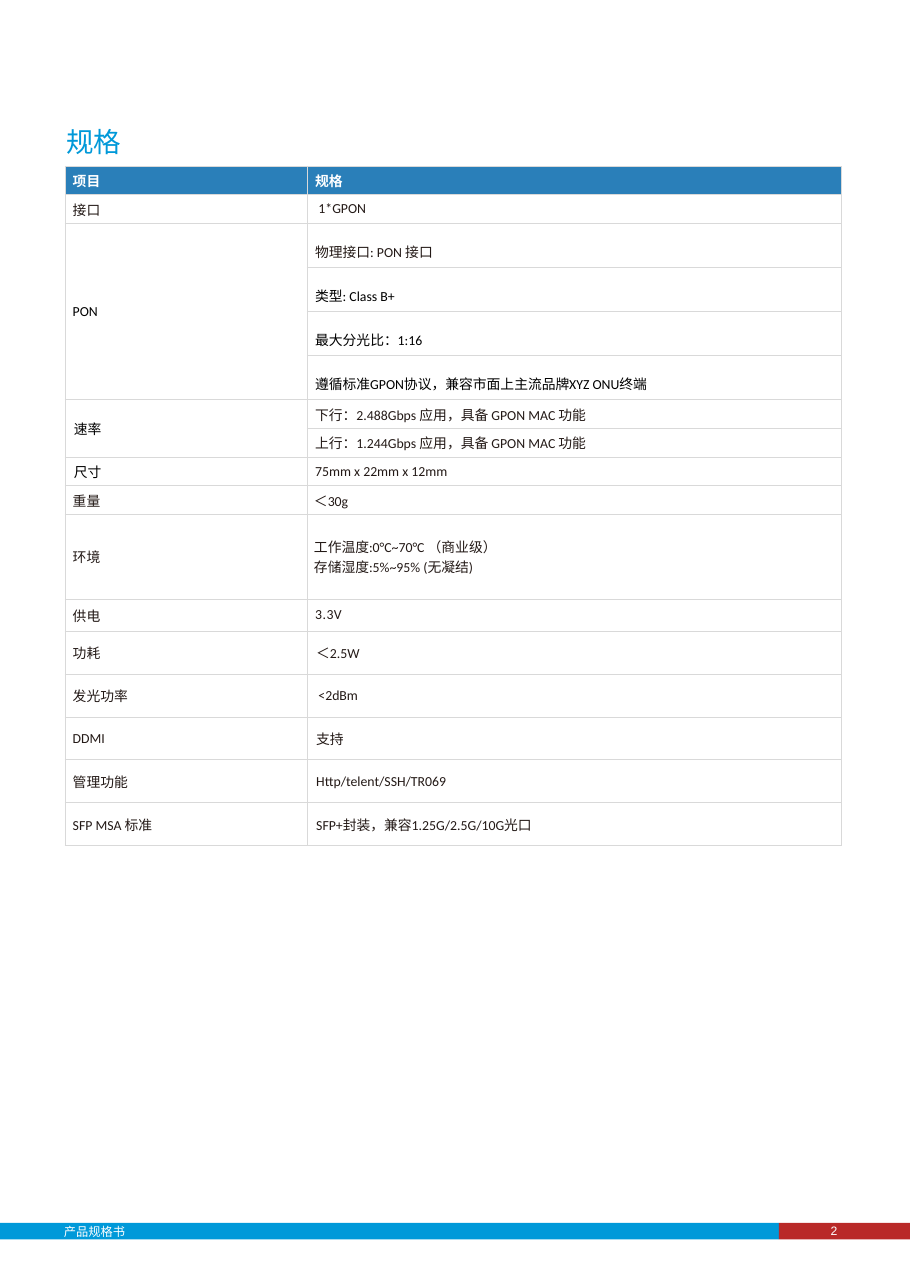
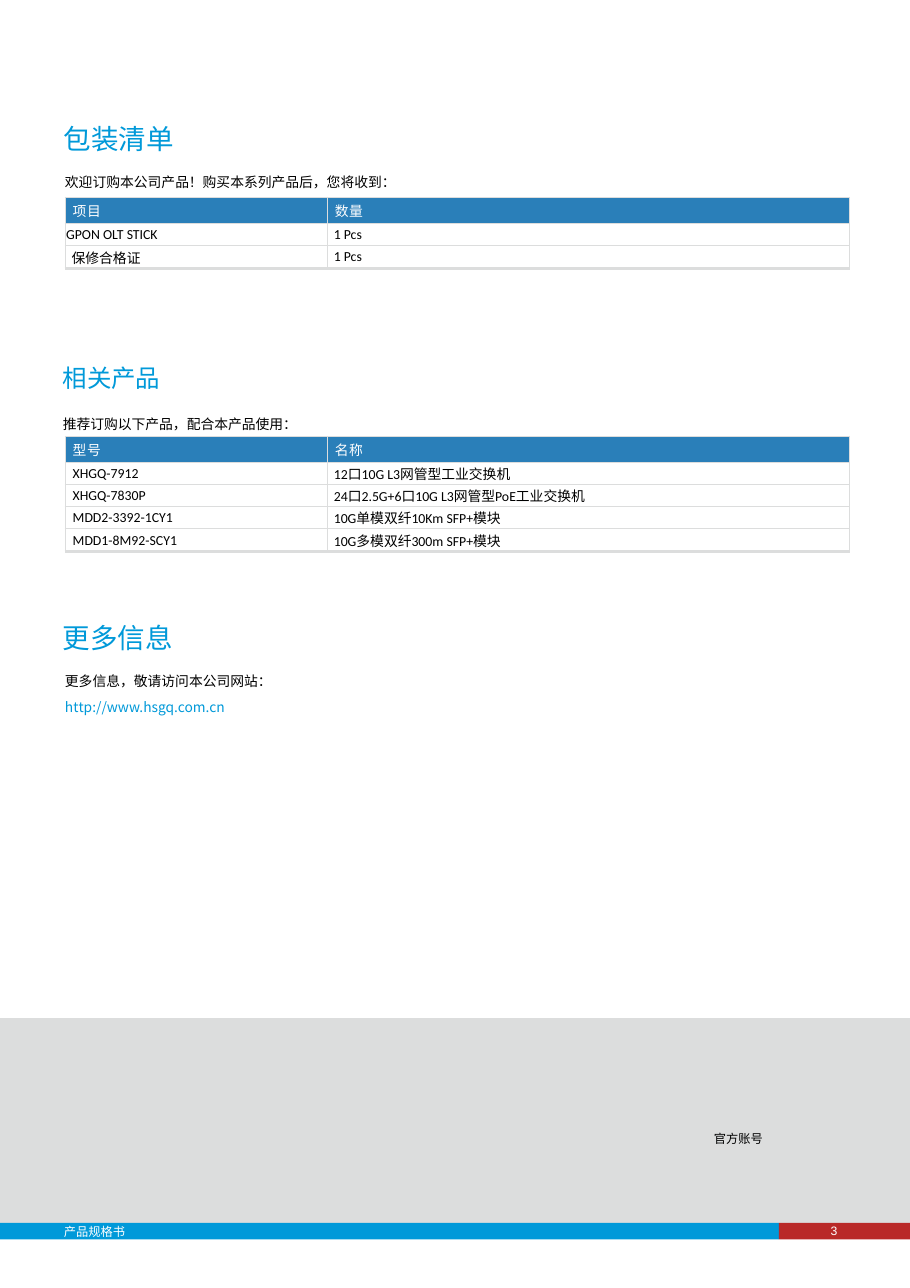
"""Build the specification and ordering pages of a product datasheet."""
from dataclasses import dataclass
from typing import Optional

from lxml.etree import SubElement
from pptx import Presentation
from pptx.dml.color import RGBColor
from pptx.enum.shapes import MSO_SHAPE
from pptx.enum.text import MSO_ANCHOR
from pptx.oxml.ns import qn
from pptx.slide import Slide
from pptx.util import Inches, Pt


@dataclass(frozen=True)
class Theme:
    """Colours, fonts and type sizes shared by both pages."""
    sky: str = "0099D9"
    red: str = "B92928"
    header: str = "2A7FB9"
    panel: str = "DCDDDD"
    rule: str = "D9D9D9"
    white: str = "FFFFFF"
    black: str = "000000"
    ink: str = "231916"
    cjk: str = "Noto Sans CJK SC"
    latin: str = "Calibri"
    folio: str = "Arial"
    title: float = 18
    subtitle: float = 16
    body: float = 9
    small: float = 8


@dataclass(frozen=True)
class Page:
    """Page size and the main lines of its grid."""
    width: float = 8.26
    height: float = 11.69
    margin: float = 0.59
    band_top: float = 11.1
    band_height: float = 0.15
    band_split: float = 7.07
    panel_top: float = 9.24


THEME = Theme()
PAGE = Page()


@dataclass(frozen=True)
class Span:
    """A run of text with its letter spacing in points."""
    text: str
    spacing: float = 0


@dataclass(frozen=True)
class Line:
    """A paragraph; exact is its line height in points, ratio a multiple."""
    spans: tuple[Span, ...]
    size: float = THEME.body
    font: str = THEME.cjk
    color: str = THEME.black
    indent: float = 0.01
    before: float = 0
    exact: Optional[float] = None
    ratio: Optional[float] = None
    bold: bool = False


@dataclass(frozen=True)
class Cell:
    """A table cell and the number of rows it covers."""
    lines: tuple[Line, ...]
    rows: int = 1
    fill: str = THEME.white


@dataclass(frozen=True)
class Row:
    """A table row; None marks a cell covered from above."""
    height: float
    cells: tuple[Optional[Cell], ...]


@dataclass(frozen=True)
class Rules:
    """Border colour and widths of a table."""
    color: str
    width: float
    last: float


def rgb(color: str) -> RGBColor:
    """Turn a hex string into a colour."""
    return RGBColor.from_string(color)


def write(frame, lines: tuple[Line, ...]) -> None:
    """Fill a text frame with lines, run by run."""
    for position, line in enumerate(lines):
        paragraph = frame.paragraphs[0] if position == 0 else frame.add_paragraph()
        properties = paragraph._p.get_or_add_pPr()
        properties.set("marL", str(Inches(line.indent)))
        properties.set("indent", "0")
        if line.exact:
            paragraph.line_spacing = Pt(line.exact)
        elif line.ratio:
            paragraph.line_spacing = line.ratio
        if line.before:
            paragraph.space_before = Pt(line.before)
        for span in line.spans:
            run = paragraph.add_run()
            run.text = span.text
            run.font.size = Pt(line.size)
            run.font.bold = line.bold
            run.font.color.rgb = rgb(line.color)
            run.font.name = line.font
            character = run._r.get_or_add_rPr()
            SubElement(character, qn("a:ea")).set("typeface", THEME.cjk)
            if span.spacing:
                character.set("spc", str(round(span.spacing * 100)))


def add_text(slide: Slide, left: float, top: float, width: float, height: float,
             *lines: Line) -> None:
    """Add a text box without margins."""
    frame = slide.shapes.add_textbox(
        Inches(left), Inches(top), Inches(width), Inches(height)).text_frame
    frame.word_wrap = True
    frame.margin_left = frame.margin_right = frame.margin_top = frame.margin_bottom = 0
    write(frame, lines)


def add_block(slide: Slide, left: float, top: float, width: float, height: float,
              color: str) -> None:
    """Add a plain filled rectangle."""
    block = slide.shapes.add_shape(
        MSO_SHAPE.RECTANGLE, Inches(left), Inches(top), Inches(width), Inches(height))
    block.shadow.inherit = False
    block.fill.solid()
    block.fill.fore_color.rgb = rgb(color)
    block.line.fill.background()


def add_footer(slide: Slide, number: int) -> None:
    """Add the two footer bands with the document name and page number."""
    add_block(slide, 0, PAGE.band_top, PAGE.band_split, PAGE.band_height, THEME.sky)
    add_block(slide, PAGE.band_split, PAGE.band_top, PAGE.width - PAGE.band_split,
              PAGE.band_height, THEME.red)
    add_text(slide, 0.57, 11.11, 1.23, 0.13,
             plain("产品规格书", size=THEME.small, color=THEME.white, exact=10))
    add_text(slide, 7.51, PAGE.band_top, 0.12, PAGE.band_height,
             plain(str(number), size=THEME.small, color=THEME.white,
                   font=THEME.folio, indent=0.03))


def add_border(properties, side: str, color: str, width: float) -> None:
    """Add one cell border."""
    border = SubElement(properties, qn(f"a:{side}"), w=str(Pt(width)))
    SubElement(SubElement(border, qn("a:solidFill")), qn("a:srgbClr"), val=color)


def add_grid(slide: Slide, top: float, columns: tuple[float, ...],
             rows: tuple[Row, ...], rules: Rules) -> None:
    """Add a table at the page margin."""
    table = slide.shapes.add_table(
        len(rows), len(columns), Inches(PAGE.margin), Inches(top),
        Inches(sum(columns)), Inches(sum(row.height for row in rows))).table
    table.first_row = table.horz_banding = False
    for column, width in zip(table.columns, columns):
        column.width = Inches(width)
    for r, row in enumerate(rows):
        table.rows[r].height = Inches(row.height)
        for c, content in enumerate(row.cells):
            cell = table.cell(r, c)
            properties = cell._tc.get_or_add_tcPr()
            for side in ("lnL", "lnR", "lnT", "lnB"):
                closing = side == "lnB" and r == len(rows) - 1
                add_border(properties, side, rules.color,
                           rules.last if closing else rules.width)
            cell.margin_left = cell.margin_right = 0
            cell.margin_top = cell.margin_bottom = 0
            cell.vertical_anchor = MSO_ANCHOR.MIDDLE
            cell.fill.solid()
            cell.fill.fore_color.rgb = rgb(content.fill if content else THEME.white)
            if content:
                write(cell.text_frame, content.lines)
                if content.rows > 1:
                    cell.merge(table.cell(r + content.rows - 1, c))


def plain(text: str, **style) -> Line:
    """Make a line of a single run."""
    return Line((Span(text),), **style)


def title(text: str, size: float = THEME.title) -> Line:
    """Make a section title."""
    return plain(text, size=size, color=THEME.sky, exact=round(size * 1.3, 1))


def intro(*spans: Span, indent: float, before: float) -> Line:
    """Make the sentence below a section title."""
    return Line(spans, indent=indent, before=before, exact=10.5)


def cell(*texts: str, color: str = THEME.ink, indent: float = 0.07, rows: int = 1,
         ratio: Optional[float] = None, spacing: float = 0) -> Cell:
    """Make a body cell with one line per text."""
    return Cell(tuple(Line((Span(text, spacing),), font=THEME.latin, color=color,
                           indent=indent, ratio=ratio) for text in texts), rows)


def bold_head(text: str) -> Cell:
    """Make a header cell of the specification table."""
    return Cell((plain(text, font=THEME.latin, color=THEME.white, indent=0.07,
                       bold=True),), fill=THEME.header)


def spaced_head(text: str) -> Cell:
    """Make a header cell of an ordering table."""
    return Cell((Line((Span(text[0], 0.3), Span(text[1:])), color=THEME.white,
                      indent=0.07),), fill=THEME.header)


def order_row(label: str, value: str, height: float = 0.2, indent: float = 0.07) -> Row:
    """Make a body row of an ordering table."""
    return Row(height, (cell(label, color=THEME.black, indent=indent),
                        cell(value, color=THEME.black, indent=0.06)))


def build_specification(slide: Slide) -> None:
    """Draw the specification page."""
    low, tall = 0.26, 0.39
    pon = ("类型: Class B+", "最大分光比：1:16",
           "遵循标准GPON协议，兼容市面上主流品牌XYZ ONU终端")
    features = (("功耗", "＜2.5W", 0.08), ("发光功率", "<2dBm", 0.1),
                ("DDMI", "支持", 0.08), ("管理功能", "Http/telent/SSH/TR069", 0.08),
                ("SFP MSA 标准", "SFP+封装，兼容1.25G/2.5G/10G光口", 0.08))
    rows = (
        Row(low, (bold_head("项目"), bold_head("规格"))),
        Row(low, (cell("接口"), cell("1*GPON", indent=0.1))),
        Row(0.4, (cell("PON", color=THEME.black, rows=4),
                  cell("物理接口: PON 接口", ratio=1.56))),
        *(Row(0.4, (None, cell(text, color=THEME.black, ratio=1.56))) for text in pon),
        Row(low, (cell("速率", color=THEME.black, indent=0.08, rows=2),
                  cell("下行：2.488Gbps 应用，具备 GPON MAC 功能"))),
        Row(low, (None, cell("上行：1.244Gbps 应用，具备 GPON MAC 功能"))),
        Row(low, (cell("尺寸", color=THEME.black, indent=0.08),
                  cell("75mm x 22mm x 12mm"))),
        Row(low, (cell("重量"), cell("＜30g", indent=0.06))),
        Row(0.77, (cell("环境"), cell("工作温度:0°C~70°C （商业级）",
                                    "存储湿度:5%~95% (无凝结)", indent=0.06))),
        Row(0.29, (cell("供电"), cell("3.3V", spacing=0.3))),
        *(Row(tall, (cell(label), cell(value, indent=indent)))
          for label, value, indent in features),
    )
    add_text(slide, PAGE.margin, 1.11, 1.53, 0.3, title("规格"))
    add_grid(slide, 1.51, (2.2, 4.85), rows, Rules(THEME.rule, 0.75, 0.75))


def build_ordering(slide: Slide) -> None:
    """Draw the packing list, related products and contact page."""
    columns = (2.38, 4.74)
    rules = Rules(THEME.panel, 0.57, 2.27)
    add_block(slide, 0, PAGE.panel_top, PAGE.width,
              PAGE.band_top - PAGE.panel_top, THEME.panel)
    add_text(slide, 6.47, 10.26, 0.81, 0.13,
             plain("官⽅账号", size=THEME.small, exact=10))
    add_text(slide, 0.57, 1.08, 3.4, 0.63, title("包装清单"),
             intro(Span("欢迎订购本公司产品"), Span("！", -2.2), Span("购买本系列产品"),
                   Span("后", -0.6), Span("，", -3.5), Span("您将收到："),
                   indent=0.02, before=12.7))
    add_grid(slide, 1.79, columns, (
        Row(0.24, (spaced_head("项⽬"), spaced_head("数量"))),
        order_row("GPON OLT STICK", "1 Pcs", indent=0.01),
        order_row("保修合格证", "1 Pcs", 0.21, 0.06)), rules)
    add_text(slide, 0.56, 3.27, 2.82, 0.64, title("相关产品", THEME.subtitle),
             intro(Span("推荐订购以下产"), Span("品", -0.6), Span("，", -3.5),
                   Span("配合本产品使⽤："), indent=0.01, before=15.5))
    add_grid(slide, 3.96, columns, (
        Row(0.24, (spaced_head("型号"), spaced_head("名称"))),
        order_row("XHGQ-7912", "12⼝10G L3⽹管型⼯业交换机"),
        order_row("XHGQ-7830P", "24⼝2.5G+6口10G L3⽹管型PoE⼯业交换机"),
        order_row("MDD2-3392-1CY1", "10G单模双纤10Km SFP+模块"),
        order_row("MDD1-8M92-SCY1", "10G多模双纤300m SFP+模块", 0.21)), rules)
    add_text(slide, 0.56, 5.61, 2.48, 0.88, title("更多信息"),
             intro(Span("更多信"), Span("息", -0.6), Span("，", -3.5),
                   Span("敬请访问本公司⽹站："), indent=0.03, before=12.8),
             Line((Span("h"), Span("t", -0.2), Span("tp://www.hsgq.com.cn")),
                  color=THEME.sky, indent=0.03, before=6.5, exact=10.5))


def main() -> None:
    """Build and save the presentation."""
    deck = Presentation()
    deck.slide_width, deck.slide_height = Inches(PAGE.width), Inches(PAGE.height)
    for number, build in enumerate((build_specification, build_ordering), start=2):
        slide = deck.slides.add_slide(deck.slide_layouts[6])
        build(slide)
        add_footer(slide, number)
    deck.save("out.pptx")


if __name__ == "__main__":
    main()
